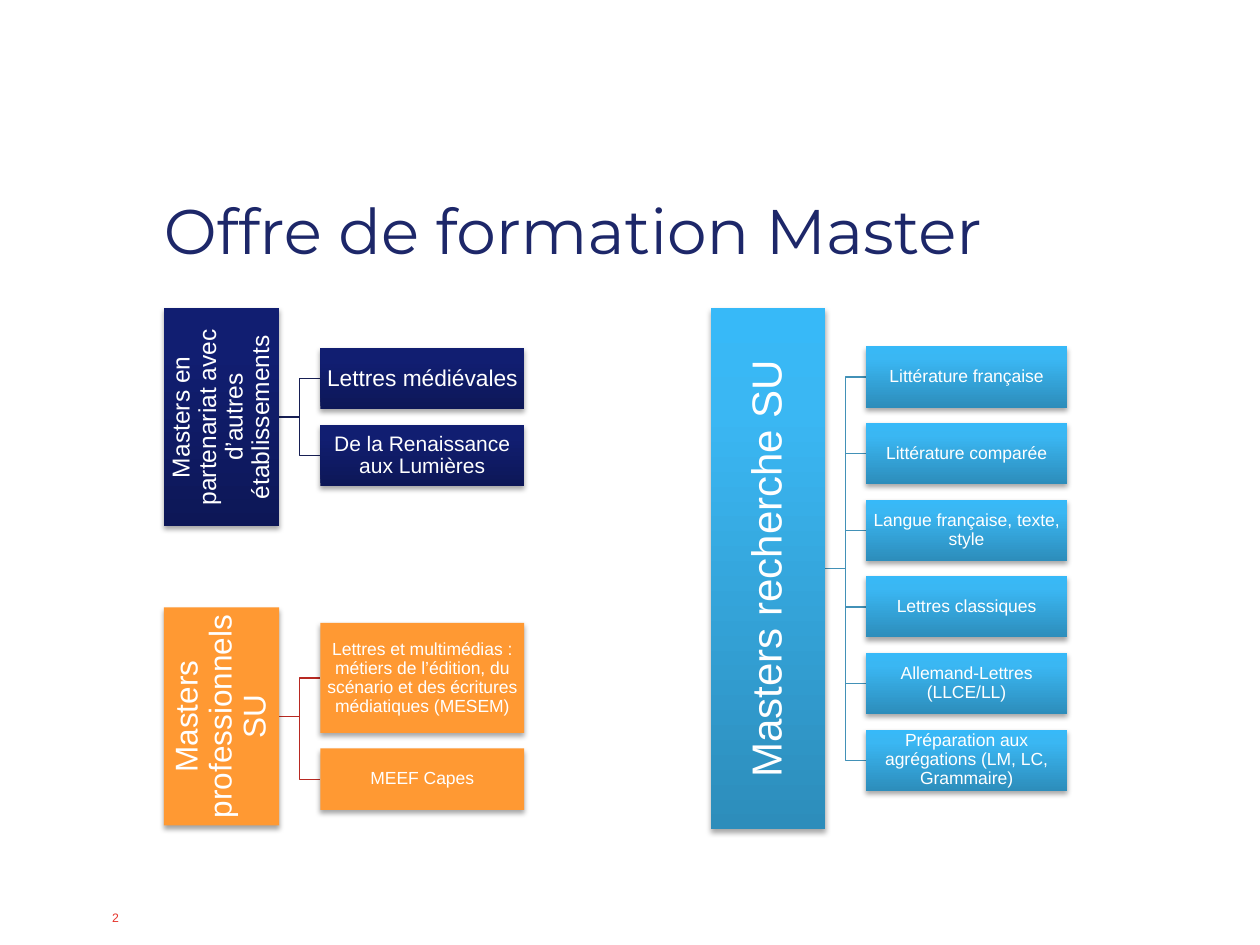
from dataclasses import dataclass
from lxml.etree import SubElement
from pptx import Presentation
from pptx.dml.color import RGBColor
from pptx.enum.shapes import MSO_SHAPE
from pptx.enum.text import MSO_ANCHOR, PP_ALIGN
from pptx.oxml import parse_xml
from pptx.oxml.ns import nsdecls, qn
from pptx.util import Pt


@dataclass(frozen=True)
class Theme:
    body_font: str = "Arial"
    title_font: str = "Montserrat"
    title_color: str = "1D2769"
    number_color: str = "E6332A"
    on_fill: str = "FFFFFF"
    navy: tuple = ("0D1757", "111E71", "0F1C73")
    orange: tuple = ("FF9933",)
    sky: tuple = ("2D8DBB", "3AB7F3", "37B9F8")
    navy_line: str = "171F54"
    red_line: str = "B82922"
    sky_line: str = "4291B7"
    title_size: float = 36
    number_size: float = 7
    item_size: float = 10


def write_text(shape, text, size, color, font, align=PP_ALIGN.LEFT,
               anchor=MSO_ANCHOR.MIDDLE, inset=(0.9, 0.9), wrap=True, spacing=0.9):
    frame = shape.text_frame
    frame.word_wrap = wrap
    frame.vertical_anchor = anchor
    frame.margin_left = frame.margin_right = Pt(inset[0])
    frame.margin_top = frame.margin_bottom = Pt(inset[1])
    paragraph = frame.paragraphs[0]
    paragraph.alignment = align
    paragraph.line_spacing = spacing
    run = paragraph.add_run()
    run.text = text
    run.font.size = Pt(size)
    run.font.name = font
    run.font.color.rgb = RGBColor.from_string(color)


class TreeSlide:
    GAP = 8.8
    LINK = 23.4

    def __init__(self, slide, theme):
        self.slide = slide
        self.theme = theme

    def label(self, text, left, top, width, height, **style):
        box = self.slide.shapes.add_textbox(Pt(left), Pt(top), Pt(width), Pt(height))
        write_text(box, text, anchor=MSO_ANCHOR.BOTTOM, inset=(2.9, 0), **style)

    def paint(self, shape, colors):
        if len(colors) == 1:
            shape.fill.solid()
            shape.fill.fore_color.rgb = RGBColor.from_string(colors[0])
        else:
            stops = "".join(
                f'<a:gs pos="{position}"><a:srgbClr val="{color}"/></a:gs>'
                for position, color in zip((0, 80000, 100000), colors))
            gradient = parse_xml(
                f'<a:gradFill {nsdecls("a")} rotWithShape="0"><a:gsLst>{stops}</a:gsLst>'
                '<a:lin ang="16200000" scaled="0"/></a:gradFill>')
            shape.element.spPr.find(qn("a:prstGeom")).addnext(gradient)
        shape.line.fill.background()

    def add_shadow(self, shape):
        shape.shadow.inherit = False
        effects = shape.element.spPr.find(qn("a:effectLst"))
        shadow = SubElement(effects, qn("a:outerShdw"), blurRad=str(Pt(3.1)),
                            dist=str(Pt(1.8)), dir="5400000", rotWithShape="0")
        black = SubElement(shadow, qn("a:srgbClr"), val="000000")
        SubElement(black, qn("a:alpha"), val="35000")

    def block(self, text, left, top, width, height, colors, size, rotation=0):
        block = self.slide.shapes.add_shape(
            MSO_SHAPE.RECTANGLE, Pt(left), Pt(top), Pt(width), Pt(height))
        block.rotation = rotation
        self.paint(block, colors)
        self.add_shadow(block)
        write_text(block, text, size=size, color=self.theme.on_fill,
                   font=self.theme.body_font, align=PP_ALIGN.CENTER)

    def elbow(self, left, start, end, color):
        bend = left + self.LINK / 2
        builder = self.slide.shapes.build_freeform(Pt(left), Pt(start))
        builder.add_line_segments(
            [(Pt(bend), Pt(start)), (Pt(bend), Pt(end)), (Pt(left + self.LINK), Pt(end))],
            close=False)
        link = builder.convert_to_shape()
        link.fill.background()
        link.line.color.rgb = RGBColor.from_string(color)
        link.line.width = Pt(0.75)
        link.shadow.inherit = False

    def tree(self, heading, heading_size, left, middle, length, thickness,
             item_width, items, colors, line):
        total = sum(height for _, height, _ in items) + self.GAP * (len(items) - 1)
        tops = []
        top = middle - total / 2
        for _, height, _ in items:
            tops.append(top)
            top += height + self.GAP
        right = left + thickness
        for (_, height, _), top in reversed(list(zip(items, tops))):
            self.elbow(right, middle, top + height / 2, line)
        self.block(heading, left + (thickness - length) / 2, middle - thickness / 2,
                   length, thickness, colors, heading_size, rotation=270)
        for (text, height, size), top in zip(items, tops):
            self.block(text, right + self.LINK, top, item_width, height, colors, size)


def main():
    theme = Theme()
    deck = Presentation()
    deck.slide_width, deck.slide_height = Pt(720), Pt(540)
    page = TreeSlide(deck.slides.add_slide(deck.slide_layouts[6]), theme)

    page.label("2", 61.2, 519.8, 18, 8.6, size=theme.number_size,
               color=theme.number_color, font=theme.body_font, wrap=False, spacing=1.0)
    page.label("Offre de formation Master", 90.7, 77.8, 593.3, 75.6,
               size=theme.title_size, color=theme.title_color, font=theme.title_font)

    left_column = dict(left=93.6, length=124.6, thickness=66, item_width=116.6)
    page.tree("Masters en partenariat avec d’autres établissements", 14, middle=238.4,
              items=[("Lettres médiévales", 35.2, 13),
                     ("De la Renaissance aux Lumières", 35.2, 12)],
              colors=theme.navy, line=theme.navy_line, **left_column)
    page.tree("Masters professionnels SU", 18, middle=409.4,
              items=[("Lettres et multimédias : métiers de l’édition, du scénario "
                      "et des écritures médiatiques (MESEM)", 62.9, theme.item_size),
                     ("MEEF Capes", 35.2, theme.item_size)],
              colors=theme.orange, line=theme.red_line, **left_column)

    research = ["Littérature française", "Littérature comparée",
                "Langue française, texte, style", "Lettres classiques",
                "Allemand-Lettres (LLCE/LL)",
                "Préparation aux agrégations (LM, LC, Grammaire)"]
    page.tree("Masters recherche SU", 24, left=406.4, middle=324.9, length=298,
              thickness=65, item_width=115,
              items=[(text, 35, theme.item_size) for text in research],
              colors=theme.sky, line=theme.sky_line)

    deck.save("out.pptx")


if __name__ == "__main__":
    main()
